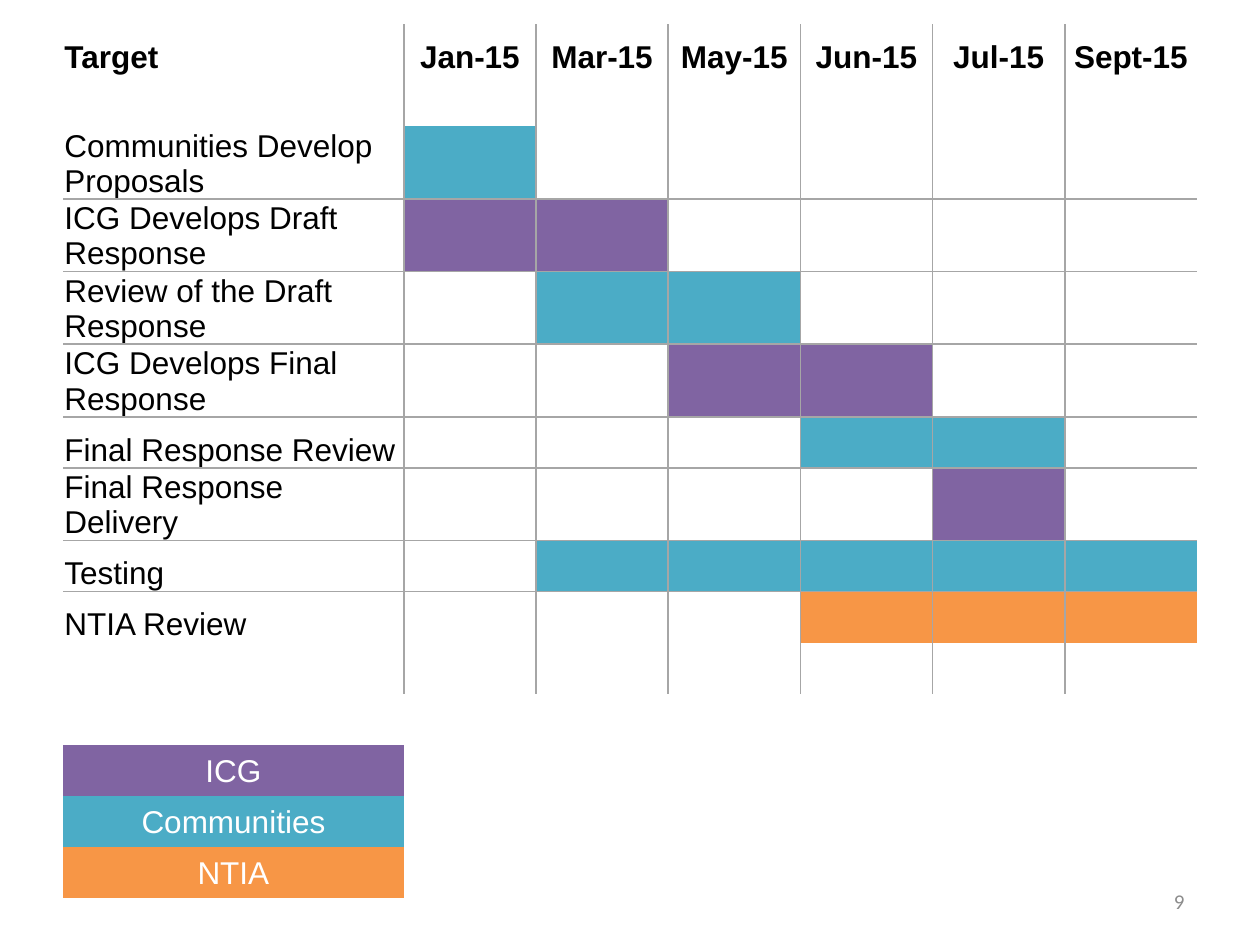
import pptx
import pptx.dml.color
import pptx.enum.text
import pptx.oxml
import pptx.oxml.ns
import pptx.util

Cm = pptx.util.Cm
ALIGN = pptx.enum.text.PP_ALIGN
ANCHOR = pptx.enum.text.MSO_ANCHOR

ICG, COMMUNITIES, NTIA = "8064A2", "4BACC6", "F79646"
GRID = "A6A6A6"
MONTHS = ["Jan-15", "Mar-15", "May-15", "Jun-15", "Jul-15", "Sept-15"]
TASKS = [
    ("Communities Develop Proposals", COMMUNITIES, 1, 1),
    ("ICG Develops Draft Response", ICG, 1, 2),
    ("Review of the Draft Response", COMMUNITIES, 2, 3),
    ("ICG Develops Final Response", ICG, 3, 4),
    ("Final Response Review", COMMUNITIES, 4, 5),
    ("Final Response Delivery", ICG, 5, 5),
    ("Testing", COMMUNITIES, 2, 6),
    ("NTIA Review", NTIA, 4, 6),
]
LEGEND = [("ICG", ICG), ("Communities", COMMUNITIES), ("NTIA", NTIA)]
FIRST_TASK = 2
GRID_END = FIRST_TASK + len(TASKS)
FIRST_LEGEND = GRID_END + 2


def rgb(value):
    """Turn a hex string into a colour."""
    return pptx.dml.color.RGBColor.from_string(value)


def add_run(p, text, size, color, font="Arial", bold=False):
    """Add one formatted run to a paragraph."""
    r = p.add_run()
    r.text = text
    r.font.name = font
    r.font.size = pptx.util.Pt(size)
    r.font.bold = bold
    r.font.color.rgb = rgb(color)


def write_cell(cell, text, align=ALIGN.LEFT, anchor=ANCHOR.BOTTOM, color="000000", bold=False):
    """Write text into a table cell."""
    cell.vertical_anchor = anchor
    p = cell.text_frame.paragraphs[0]
    p.alignment = align
    add_run(p, text, 18, color, bold=bold)


def fill_cell(cell, color):
    """Fill a table cell with a solid colour."""
    cell.fill.solid()
    cell.fill.fore_color.rgb = rgb(color)


def set_borders(cell, visible):
    """Draw the visible sides of a cell and clear the others."""
    tcPr = cell._tc.get_or_add_tcPr()
    for i, side in enumerate("LRTB"):
        paint = f'<a:solidFill><a:srgbClr val="{GRID}"/></a:solidFill>' if side in visible else "<a:noFill/>"
        tcPr.insert(i, pptx.oxml.parse_xml(
            f'<a:ln{side} {pptx.oxml.ns.nsdecls("a")} w="12700">{paint}</a:ln{side}>'))


def visible_sides(row, col):
    """Return the sides of a cell that carry a grid line."""
    rules = {
        "L": row <= GRID_END and col > 0,
        "R": row <= GRID_END and col < len(MONTHS),
        "T": FIRST_TASK < row < GRID_END,
        "B": FIRST_TASK <= row < GRID_END - 1,
    }
    return [side for side, shown in rules.items() if shown]


def add_timeline(slide, left, top, width, row_height):
    """Add the timeline table with its legend rows."""
    rows, cols = FIRST_LEGEND + len(LEGEND), len(MONTHS) + 1
    sp = slide.shapes.add_table(rows, cols, left, top, width, row_height * rows)
    table = sp.table
    table.first_row = table.horz_banding = False
    label_width = Cm(6.87)
    table.columns[0].width = label_width
    for col in range(1, cols):
        table.columns[col].width = (width - label_width) // len(MONTHS)
    for row in range(rows):
        table.rows[row].height = row_height
        for col in range(cols):
            cell = table.cell(row, col)
            cell.margin_left = cell.margin_right = Cm(0.03)
            cell.margin_top = Cm(0.04)
            cell.margin_bottom = 0
            cell.fill.background()
            set_borders(cell, visible_sides(row, col))

    write_cell(table.cell(0, 0), "Target", bold=True)
    for col, month in enumerate(MONTHS, 1):
        write_cell(table.cell(0, col), month, ALIGN.CENTER, bold=True)
    for row, (task, color, start, end) in enumerate(TASKS, FIRST_TASK):
        write_cell(table.cell(row, 0), task)
        for col in range(start, end + 1):
            fill_cell(table.cell(row, col), color)
    for row, (group, color) in enumerate(LEGEND, FIRST_LEGEND):
        write_cell(table.cell(row, 0), group, ALIGN.CENTER, ANCHOR.MIDDLE, "FFFFFF")
        fill_cell(table.cell(row, 0), color)


def add_page_number(slide, left, top, width, height):
    """Add the page number at the right of its box."""
    sp = slide.shapes.add_textbox(left, top, width, height)
    tf = sp.text_frame
    tf.word_wrap = True
    tf.vertical_anchor = ANCHOR.MIDDLE
    p = tf.paragraphs[0]
    p.alignment = ALIGN.RIGHT
    add_run(p, "9", 12, "8C8C8C", "Calibri")


def main():
    """Build and save the presentation."""
    prs = pptx.Presentation()
    prs.slide_width, prs.slide_height = Cm(25.4), Cm(19.05)
    slide = prs.slides.add_slide(prs.slide_layouts[6])
    add_timeline(slide, Cm(1.27), Cm(0.49), Cm(22.86), Cm(1.03))
    add_page_number(slide, Cm(18.2), Cm(17.66), Cm(5.93), Cm(1.01))
    prs.save("out.pptx")


if __name__ == "__main__":
    main()
